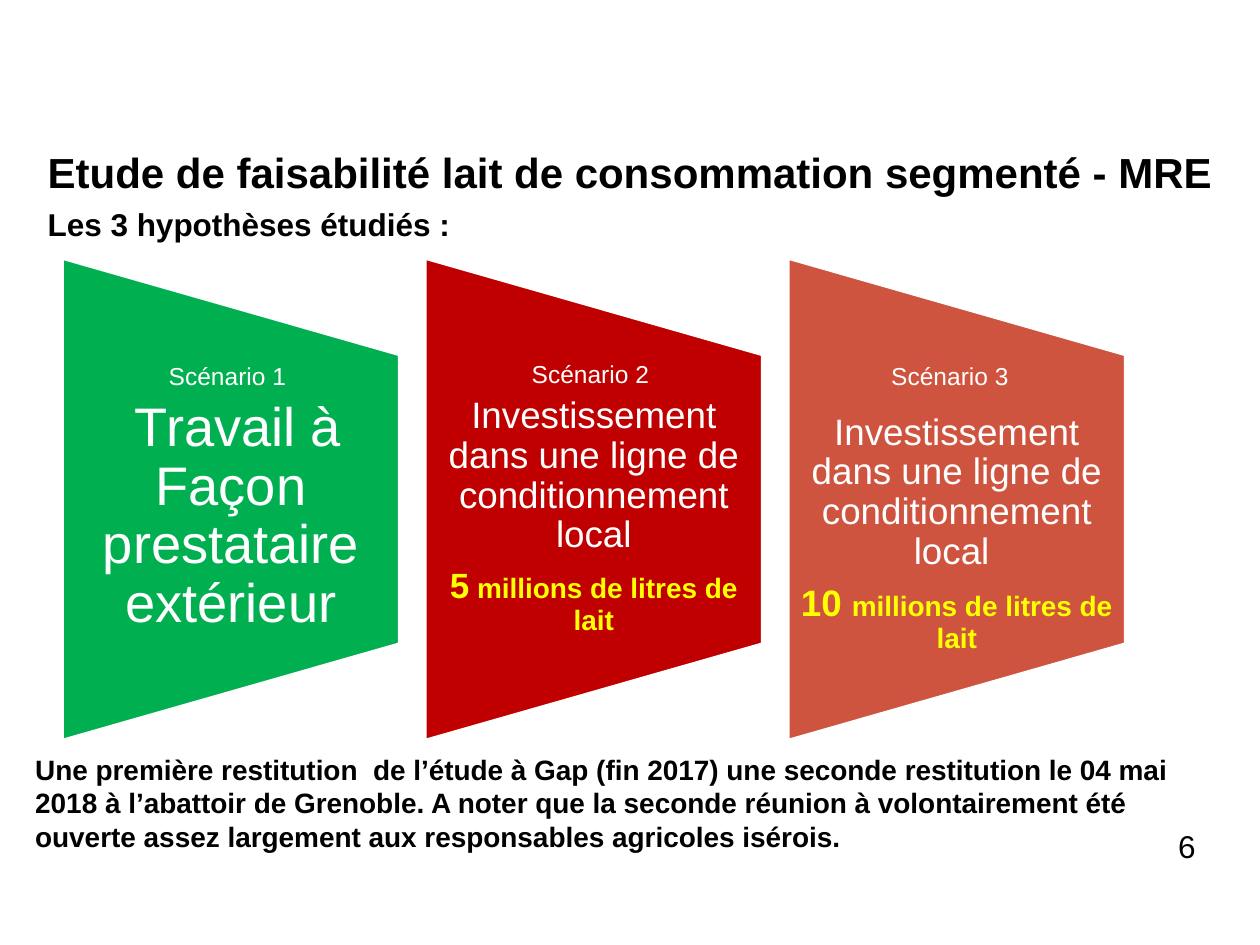
from pptx import Presentation
from pptx.dml.color import RGBColor
from pptx.enum.shapes import MSO_SHAPE
from pptx.enum.text import MSO_ANCHOR, PP_ALIGN
from pptx.util import Cm, Pt

TRAPEZOID = MSO_SHAPE.FLOWCHART_MANUAL_OPERATION
MIDDLE, TOP = MSO_ANCHOR.MIDDLE, MSO_ANCHOR.TOP
CENTER, LEFT = PP_ALIGN.CENTER, PP_ALIGN.LEFT
FONT = "Arial"
BLACK, WHITE, YELLOW = "000000", "FFFFFF", "FFFF00"

# Each scenario: fill, then paragraphs of (text, size, colour, bold) runs
SCENARIOS = [
    ("00B050", [
        [("Scénario 1 ", 14, WHITE, False)],
        [(" Travail à Façon prestataire extérieur", 31, WHITE, False)],
    ]),
    ("C00000", [
        [("Scénario 2 ", 14, WHITE, False)],
        [("Investissement dans une ligne de conditionnement local", 21, WHITE, False)],
        [("5", 20, YELLOW, True), (" millions de litres de lait", 16, YELLOW, True)],
    ]),
    ("CF543F", [
        [("Scénario 3", 14, WHITE, False), (" ", 28, WHITE, False)],
        [("Investissement dans une ligne de conditionnement local ", 21, WHITE, False)],
        [("10 ", 21, YELLOW, True), ("millions de litres de lait", 16, YELLOW, True)],
    ]),
]


def rgb(value):
    return RGBColor.from_string(value)


def add_run(p, text, size, color=BLACK, bold=False):
    r = p.add_run()
    r.text = text
    r.font.name = FONT
    r.font.size = Pt(size)
    r.font.bold = bold
    r.font.color.rgb = rgb(color)


def add_box(s, left, top, width, height, anchor=TOP, wrap=True):
    tf = s.shapes.add_textbox(Cm(left), Cm(top), Cm(width), Cm(height)).text_frame
    tf.word_wrap = wrap
    tf.vertical_anchor = anchor
    return tf


def add_line(s, box, text, size, bold=True, align=LEFT, anchor=TOP, wrap=True):
    p = add_box(s, *box, anchor=anchor, wrap=wrap).paragraphs[0]
    p.alignment = align
    add_run(p, text, size, bold=bold)


def add_scenario(s, left, top, width, height, fill, paragraphs):
    # Trapezoid, turned a quarter about the centre of its box
    shift = (height - width) / 2
    sp = s.shapes.add_shape(TRAPEZOID, Cm(left - shift), Cm(top + shift),
                            Cm(height), Cm(width))
    sp.rotation = 270
    sp.shadow.inherit = False
    sp.fill.solid()
    sp.fill.fore_color.rgb = rgb(fill)
    sp.line.color.rgb = rgb(WHITE)
    sp.line.width = Pt(2)

    # Upright text over the middle three fifths
    tf = add_box(s, left, top + height / 5, width, height * 3 / 5, anchor=MIDDLE)
    tf.margin_top = tf.margin_bottom = 0
    for i, runs in enumerate(paragraphs):
        p = tf.add_paragraph() if i else tf.paragraphs[0]
        p.alignment = CENTER
        p.line_spacing = 0.9
        p.space_after = Pt(0.35 * max(run[1] for run in runs))
        for run in runs:
            add_run(p, *run)


def add_scenarios(s, left, top, width, height, gap):
    card = (width - gap * (len(SCENARIOS) - 1)) / len(SCENARIOS)
    for i, (fill, paragraphs) in enumerate(SCENARIOS):
        add_scenario(s, left + i * (card + gap), top, card, height, fill, paragraphs)


def main():
    prs = Presentation()
    prs.slide_width, prs.slide_height = Cm(25.4), Cm(19.05)
    s = prs.slides.add_slide(prs.slide_layouts[6])

    # Heading
    add_line(s, (0, 1.88, 25.4, 3.18),
             "Etude de faisabilité lait de consommation segmenté - MRE",
             24, align=CENTER, anchor=MIDDLE)
    add_line(s, (0.71, 4.01, 8.71, 1.02), "Les 3 hypothèses étudiés :", 18, wrap=False)

    # Scenarios
    add_scenarios(s, 1.25, 5.2, 21.44, 9.73, gap=0.51)

    # Closing note and page number
    add_line(s, (0.46, 15.04, 24.51, 2.31),
             "Une première restitution  de l’étude à Gap (fin 2017) une seconde "
             "restitution le 04 mai 2018 à l’abattoir de Grenoble. A noter que la "
             "seconde réunion à volontairement été ouverte assez largement aux "
             "responsables agricoles isérois.", 16)
    add_line(s, (23.5, 16.54, 1.6, 1.02), "6", 18, bold=False)

    prs.save("out.pptx")


if __name__ == "__main__":
    main()
